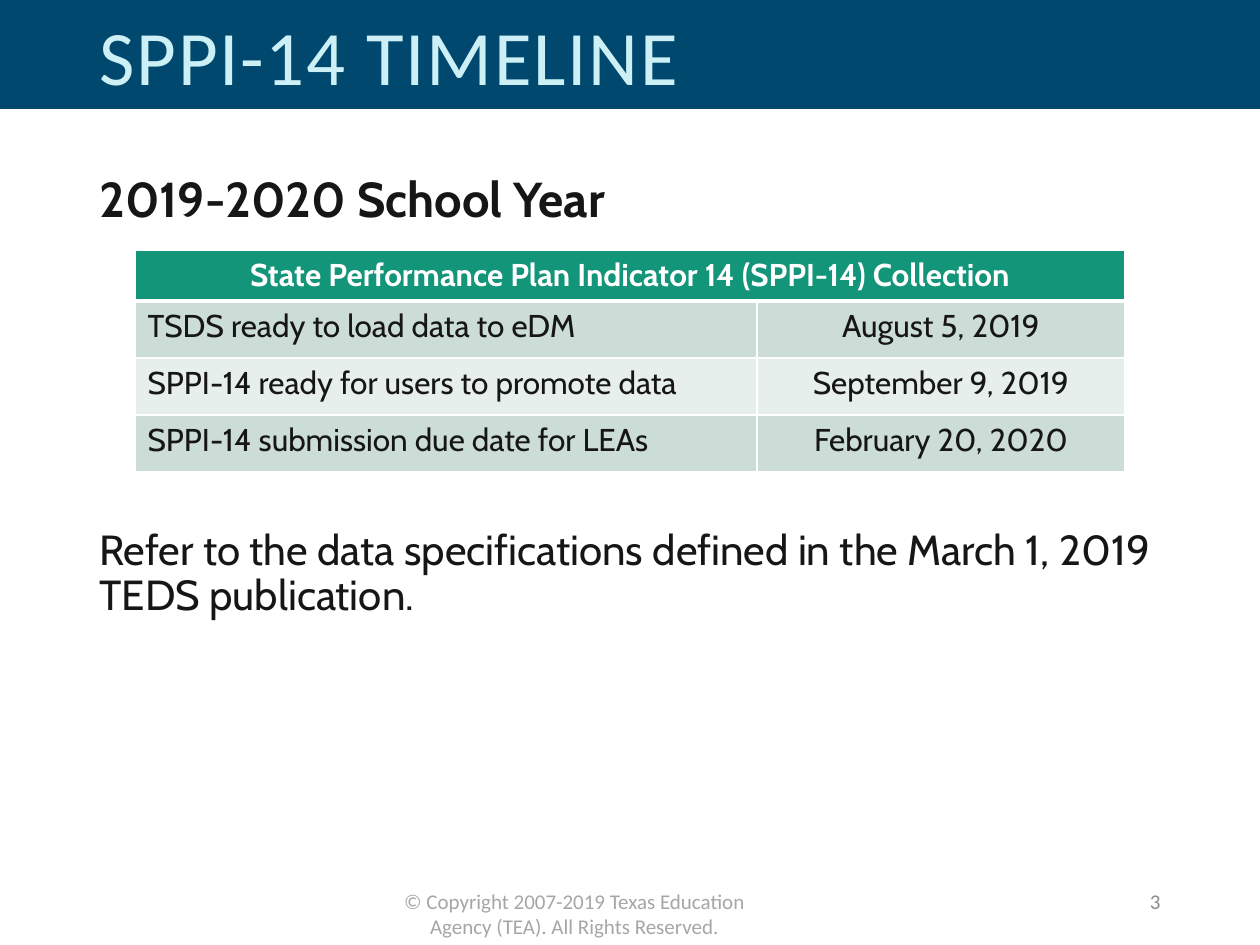
from lxml.etree import SubElement
from pptx import Presentation
from pptx.dml.color import RGBColor
from pptx.enum.shapes import MSO_SHAPE
from pptx.enum.text import MSO_ANCHOR, MSO_AUTO_SIZE, PP_ALIGN
from pptx.oxml.ns import qn
from pptx.util import Pt

SCALE = 914400 / 126
NAVY = RGBColor(0x00, 0x48, 0x6E)
AQUA = RGBColor(0xCC, 0xF0, 0xF5)
INK = RGBColor(0x17, 0x16, 0x16)
GREEN = RGBColor(0x12, 0x95, 0x79)
MINT = RGBColor(0xCC, 0xDD, 0xD7)
PALE = RGBColor(0xE7, 0xEF, 0xEC)
WHITE = RGBColor(0xFF, 0xFF, 0xFF)
SILVER = RGBColor(0xA6, 0xA6, 0xA6)
GRAY = RGBColor(0x8C, 0x8C, 0x8C)

HEAD = "State Performance Plan Indicator 14 (SPPI-14) Collection"
DATES = [
    ("TSDS ready to load data to eDM", "August 5, 2019"),
    ("SPPI-14 ready for users to promote data", "September 9, 2019"),
    ("SPPI-14 submission due date for LEAs", "February 20, 2020"),
]


def px(num):
    """Turn pixels into EMU."""
    return round(num * SCALE)


def style(para, face, size, color, bold=False, align=PP_ALIGN.LEFT):
    """Format a whole paragraph."""
    para.alignment = align
    font = para.font
    font.name, font.size, font.bold = face, Pt(size), bold
    font.color.rgb = color


def add_text(slide, box, text, anchor=MSO_ANCHOR.TOP):
    """Add a wrapping text box and return its paragraphs."""
    frame = slide.shapes.add_textbox(*map(px, box)).text_frame
    frame.word_wrap = True
    frame.vertical_anchor = anchor
    frame.text = text
    return frame.paragraphs


def add_title(slide, box, text):
    """Draw the banner and set the title over it."""
    left, top, width, height = box
    band = slide.shapes.add_shape(MSO_SHAPE.RECTANGLE, *map(px, box))
    band.shadow.inherit = False
    band.fill.solid()
    band.fill.fore_color.rgb = NAVY
    band.line.fill.background()
    title = slide.shapes.title
    band._element.addnext(title._element)
    title.left, title.top = px(left + 87), px(top + 6)
    title.width, title.height = px(width - 252), px(height)
    frame = title.text_frame
    frame.text = text
    frame.auto_size = MSO_AUTO_SIZE.NONE
    frame.vertical_anchor = MSO_ANCHOR.MIDDLE
    para = frame.paragraphs[0]
    para.line_spacing = 0.9
    style(para, "Calibri", 44, AQUA)
    para.runs[0]._r.get_or_add_rPr().set("spc", "100")


def add_body(slide, box):
    """Write the heading and the note that follows the table."""
    head, note = add_text(slide, box, "2019-2020 School Year\n"
                          "Refer to the data specifications defined in the "
                          "March 1, 2019 TEDS publication.")
    style(head, "Cabin", 28, INK, bold=True)
    style(note, "Cabin", 24, INK)
    head.line_spacing = note.line_spacing = 0.9
    note.space_before = Pt(172)


def add_edges(cell, widths):
    """Draw white cell borders with the given widths in points."""
    props = cell._tc.get_or_add_tcPr()
    for side, width in zip("LRTB", widths):
        line = SubElement(props, qn(f"a:ln{side}"), w=str(Pt(width)))
        fill = SubElement(line, qn("a:solidFill"))
        SubElement(fill, qn("a:srgbClr"), val=str(WHITE))


def add_dates(slide, box):
    """Build the table of dates under a merged header."""
    left, top, width, height = box
    table = slide.shapes.add_table(len(DATES) + 1, 2, *map(px, box)).table
    table.columns[0].width = px(622)
    table.columns[1].width = px(width - 622)
    table.rows[0].height = px(51)
    for row in list(table.rows)[1:]:
        row.height = px((height - 51) / len(DATES))
    table.cell(0, 0).merge(table.cell(0, 1))
    for i, row in enumerate([(HEAD, ""), *DATES]):
        for j, text in enumerate(row):
            cell = table.cell(i, j)
            add_edges(cell, (1, 1, 3 if i == 1 else 1, 1 if i else 3))
            cell.fill.solid()
            cell.fill.fore_color.rgb = (MINT if i % 2 else PALE) if i else GREEN
            if text:
                cell.text = text
                mid = i == 0 or j == 1
                style(cell.text_frame.paragraphs[0], "Cabin", 18,
                      INK if i else WHITE, i == 0,
                      PP_ALIGN.CENTER if mid else PP_ALIGN.LEFT)


def add_foot(slide, box):
    """Write the copyright line and the page number."""
    left, top, width, height = box
    note, = add_text(slide, (left, top + 6, 383, height),
                     "© Copyright 2007-2019 Texas Education Agency (TEA). "
                     "All Rights Reserved.")
    style(note, "Calibri", 12, SILVER, align=PP_ALIGN.CENTER)
    page, = add_text(slide, (left + width - 284, top, 284, 50), "3",
                     MSO_ANCHOR.MIDDLE)
    style(page, "Calibri", 12, GRAY, align=PP_ALIGN.RIGHT)


def main():
    """Build and save the slide."""
    deck = Presentation()
    deck.slide_width, deck.slide_height = px(1260), px(945)
    slide = deck.slides.add_slide(deck.slide_layouts[5])
    add_title(slide, (0, 0, 1260, 109), "SPPI-14 TIMELINE")
    add_body(slide, (87, 169, 1086, 683))
    add_dates(slide, (135, 250, 990, 222))
    add_foot(slide, (383, 876, 790, 38))
    deck.save("out.pptx")


if __name__ == "__main__":
    main()
